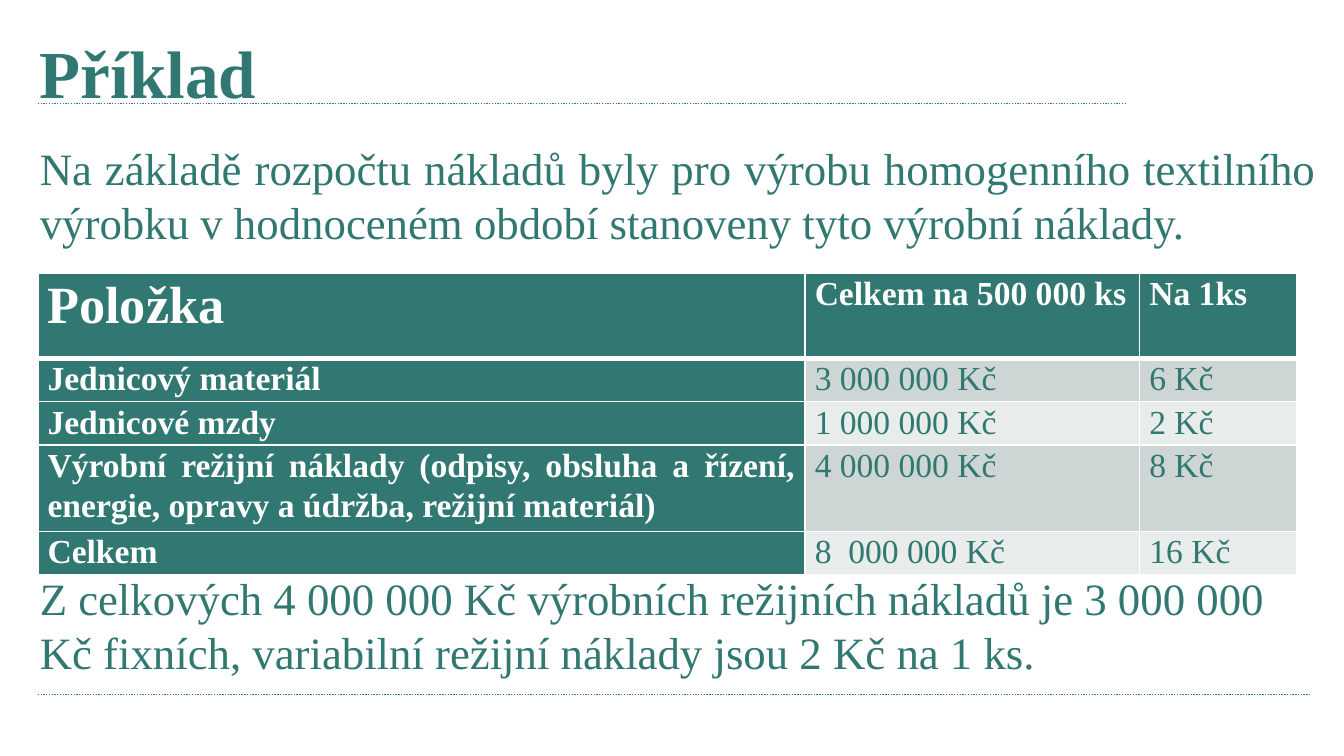
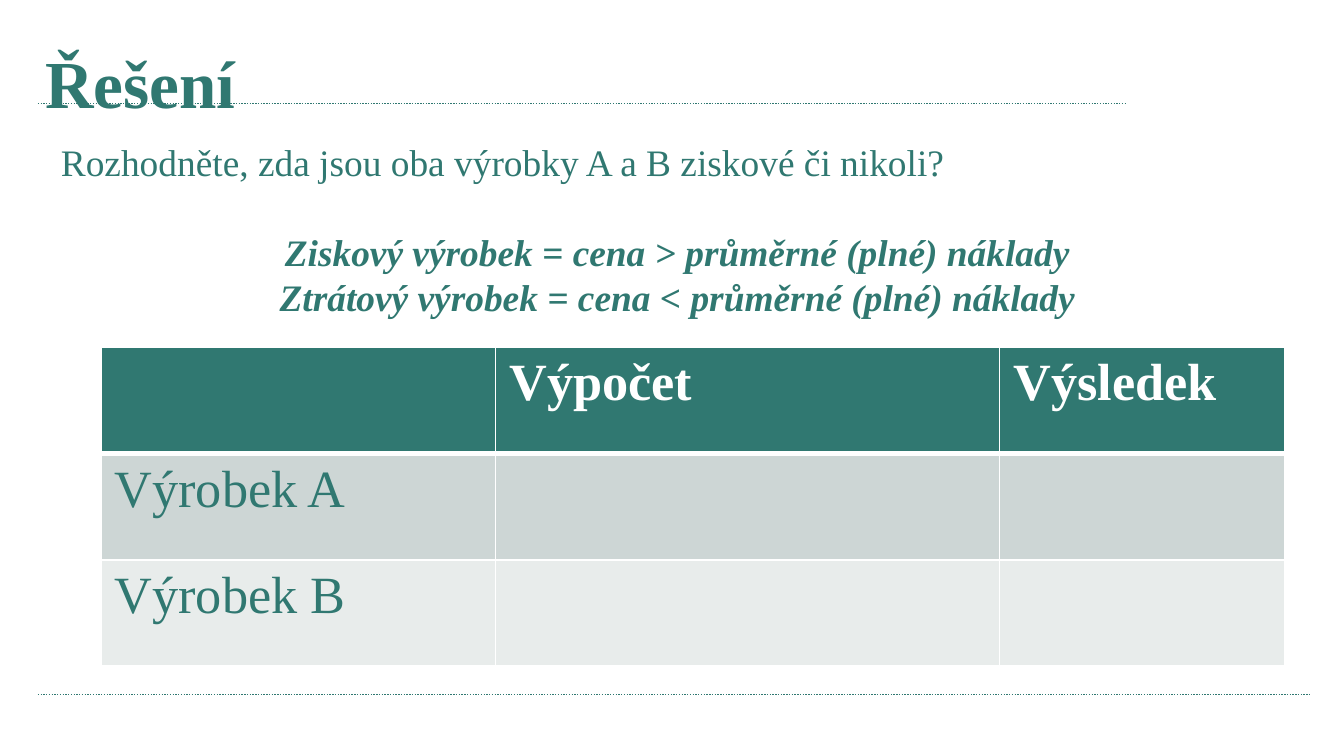
from lxml.etree import SubElement
from pptx import Presentation
from pptx.dml.color import RGBColor
from pptx.enum.dml import MSO_LINE
from pptx.enum.shapes import MSO_CONNECTOR
from pptx.enum.text import MSO_ANCHOR, PP_ALIGN
from pptx.oxml.ns import qn
from pptx.util import Emu, Pt

COLORS = {"green": "307871", "white": "FFFFFF", "dark_band": "CDD6D5", "light_band": "E8ECEB"}
FONT = "Times New Roman"
LINE_RATIO = 1.2
RULES = [(27, 805, 74), (27, 936, 496)]

SLIDES = [
    {
        "title": ("Příklad", (19, 13, 847, 76)),
        "body_box": (19, 96, 930, 394),
        "body_size": 24,
        "body": [
            {"text": "Na základě rozpočtu nákladů byly pro výrobu homogenního textilního výrobku "
                     "v hodnoceném období stanoveny tyto výrobní náklady.",
             "align": PP_ALIGN.JUSTIFY},
            {"text": "Z celkových 4 000 000 Kč výrobních režijních nákladů je 3 000 000 Kč fixních, "
                     "variabilní režijní náklady jsou 2 Kč na 1 ks.",
             "align": PP_ALIGN.LEFT, "lines_before": 6},
        ],
        "table": {
            "origin": (27, 195),
            "columns": [548, 239, 112],
            "rows": [61, 31, 31, 61, 31],
            "corner_size": 28,
            "size": 18,
            "green_first_column": True,
            "margins": (7, 0),
            "align": PP_ALIGN.JUSTIFY,
            "line_spacing": 1.07,
            "cells": [
                ["Položka", "Celkem na 500 000 ks", "Na 1ks"],
                ["Jednicový materiál", "3 000 000 Kč", "6 Kč"],
                ["Jednicové mzdy", "1 000 000 Kč", "2 Kč"],
                ["Výrobní režijní náklady (odpisy, obsluha a řízení, energie, "
                 "opravy a údržba, režijní materiál)", "4 000 000 Kč", "8 Kč"],
                ["Celkem", "8  000 000 Kč", "16 Kč"],
            ],
        },
    },
    {
        "title": ("Řešení", (23, 20, 847, 76)),
        "body_box": (34, 95, 900, 168),
        "body_size": 20,
        "body": [
            {"text": "Rozhodněte, zda jsou oba výrobky A a B ziskové či nikoli?",
             "align": PP_ALIGN.JUSTIFY},
            {"text": "Ziskový výrobek = cena > průměrné (plné) náklady",
             "align": PP_ALIGN.CENTER, "lines_before": 1, "strong": True},
            {"text": "Ztrátový výrobek = cena < průměrné (plné) náklady",
             "align": PP_ALIGN.CENTER, "strong": True},
        ],
        "table": {
            "origin": (72, 248),
            "columns": [282, 360, 204],
            "rows": [76, 76, 76],
            "corner_size": 28,
            "size": 28,
            "green_first_column": False,
            "margins": (10, 5),
            "align": PP_ALIGN.LEFT,
            "line_spacing": 1.0,
            "cells": [
                ["", "Výpočet", "Výsledek"],
                ["Výrobek A", "", ""],
                ["Výrobek B", "", ""],
            ],
        },
    },
]


def px(value):
    return Emu(value * 9525)


def color(name):
    return RGBColor.from_string(COLORS[name])


def style_runs(paragraph, size, color_name="green", bold=False, italic=False):
    for run in paragraph.runs:
        run.font.name = FONT
        run.font.size = Pt(size)
        run.font.bold = bold
        run.font.italic = italic
        run.font.color.rgb = color(color_name)


def add_rule(slide, left, right, y):
    rule = slide.shapes.add_connector(MSO_CONNECTOR.STRAIGHT, px(left), px(y), px(right), px(y))
    rule.line.color.rgb = color("green")
    rule.line.width = Pt(0.75)
    rule.line.dash_style = MSO_LINE.ROUND_DOT
    SubElement(rule._element.spPr, qn("a:effectLst"))


def add_text_frame(slide, box):
    text_frame = slide.shapes.add_textbox(*map(px, box)).text_frame
    text_frame.word_wrap = True
    return text_frame


def add_title(slide, text, box):
    text_frame = add_text_frame(slide, box)
    text_frame.vertical_anchor = MSO_ANCHOR.MIDDLE
    text_frame.text = text
    style_runs(text_frame.paragraphs[0], 36, bold=True)


def add_body(slide, box, size, items):
    text_frame = add_text_frame(slide, box)
    text_frame.text = "\n".join(item["text"] for item in items)
    pitch = size * LINE_RATIO
    for paragraph, item in zip(text_frame.paragraphs, items):
        strong = item.get("strong", False)
        paragraph.alignment = item["align"]
        paragraph.line_spacing = Pt(pitch)
        if "lines_before" in item:
            paragraph.space_before = Pt(pitch * item["lines_before"])
        style_runs(paragraph, size, bold=strong, italic=strong)


def set_borders(cell, top, bottom):
    properties = cell._tc.get_or_add_tcPr()
    for side, width in (("L", 1), ("R", 1), ("T", top), ("B", bottom)):
        line = SubElement(properties, qn(f"a:ln{side}"), w=str(Pt(width)))
        fill = SubElement(line, qn("a:solidFill"))
        SubElement(fill, qn("a:srgbClr"), val=COLORS["white"])


def add_table(slide, spec_table):
    columns, rows = spec_table["columns"], spec_table["rows"]
    left, top = spec_table["origin"]
    table = slide.shapes.add_table(len(rows), len(columns), px(left), px(top),
                                   px(sum(columns)), px(sum(rows))).table
    table.first_row = table.horz_banding = False
    for column, width in zip(table.columns, columns):
        column.width = px(width)
    for row, height in zip(table.rows, rows):
        row.height = px(height)
    side, edge = map(px, spec_table["margins"])
    for row_index, texts in enumerate(spec_table["cells"]):
        for column_index, text in enumerate(texts):
            cell = table.cell(row_index, column_index)
            header = row_index == 0 or (spec_table["green_first_column"] and column_index == 0)
            band = "dark_band" if row_index % 2 else "light_band"
            corner = row_index == column_index == 0
            set_borders(cell, 3 if row_index == 1 else 1, 3 if row_index == 0 else 1)
            cell.fill.solid()
            cell.fill.fore_color.rgb = color("green" if header else band)
            cell.margin_left = cell.margin_right = side
            cell.margin_top = cell.margin_bottom = edge
            if text:
                cell.text_frame.text = text
                paragraph = cell.text_frame.paragraphs[0]
                paragraph.alignment = spec_table["align"]
                paragraph.line_spacing = spec_table["line_spacing"]
                style_runs(paragraph, spec_table["corner_size" if corner else "size"],
                           "white" if header else "green", bold=header)


def main():
    presentation = Presentation()
    presentation.slide_width, presentation.slide_height = px(960), px(540)
    for content in SLIDES:
        slide = presentation.slides.add_slide(presentation.slide_layouts[6])
        for rule in RULES:
            add_rule(slide, *rule)
        add_title(slide, *content["title"])
        add_body(slide, content["body_box"], content["body_size"], content["body"])
        add_table(slide, content["table"])
    presentation.save("out.pptx")


if __name__ == "__main__":
    main()
